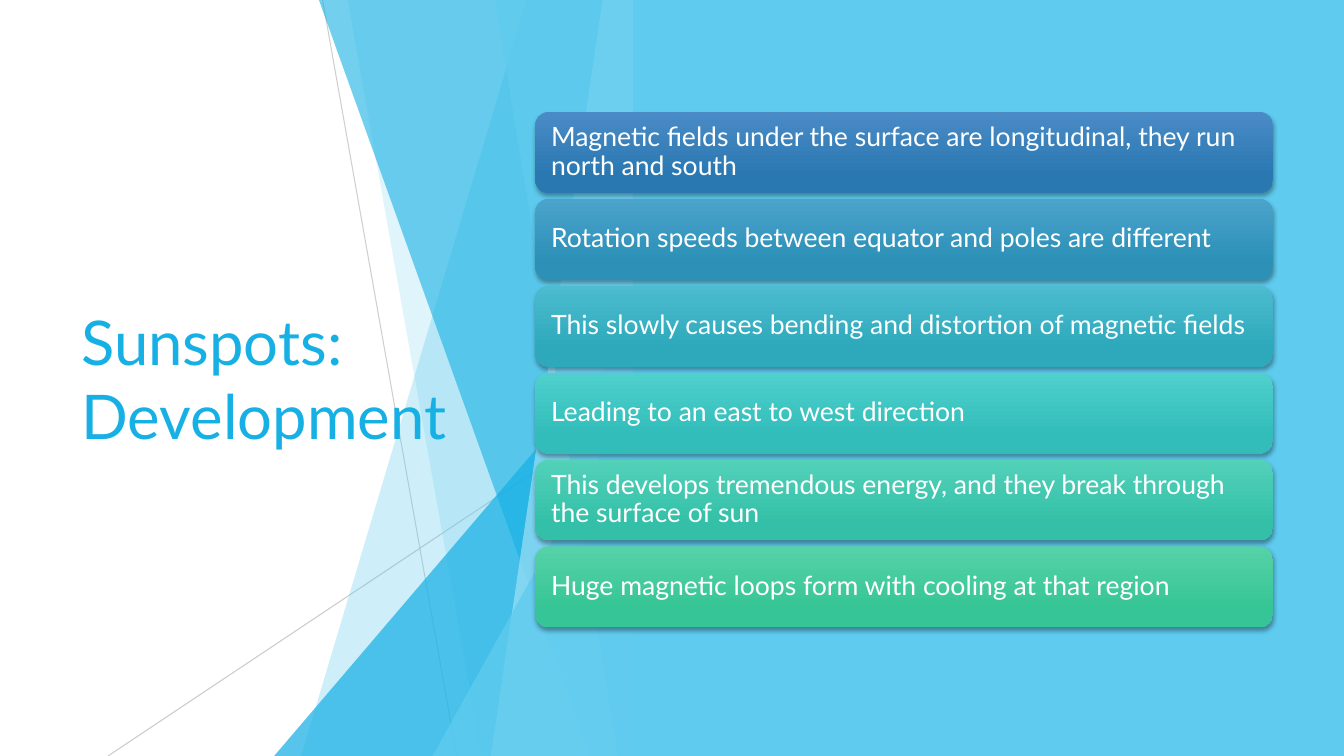
from lxml import etree
from pptx import Presentation
from pptx import util as u
from pptx.dml.color import RGBColor
from pptx.enum import shapes, text
from pptx.oxml import ns

WHITE = RGBColor(0xFF, 0xFF, 0xFF)
BLACK = RGBColor(0x00, 0x00, 0x00)
GREY = RGBColor(0xBF, 0xBF, 0xBF)
SKY = RGBColor(0x5F, 0xCB, 0xEF)
PALE = RGBColor(0x9F, 0xE0, 0xF5)
BLUE = RGBColor(0x17, 0xB0, 0xE4)

TITLE = "Sunspots: Development"
CARDS = [
    ("Magnetic fields under the surface are longitudinal, they run north and south", "4A8BC6", "2A78B2"),
    ("Rotation speeds between equator and poles are different", "4BA3CB", "2C90B7"),
    ("This slowly causes bending and distortion of magnetic fields", "4CBCCF", "2DA9BB"),
    ("Leading to an east to west direction", "4FD0CD", "32BDBA"),
    ("This develops tremendous energy, and they break through the surface of sun", "53D1B9", "34C0A8"),
    ("Huge magnetic loops form with cooling at that region", "56D2A7", "36C596"),
]

WIDTH, HEIGHT = 33.87, 19.05
PANEL_LEFT = 15.95
BAND_TOP = -0.02
RAYS = [((8.13, 0), (11.51, HEIGHT), 75), ((PANEL_LEFT, 10.24), (2.72, HEIGHT), 80)]
FACETS = [
    ("band", 13.28, 7.59, SKY, 30),
    ("band", 8.76, 12.14, SKY, 20),
    ("triangle", 6.91, 8.46, BLUE, 72),
    ("band", 8.03, 14.88, BLUE, 60),
    ("band", 15.19, 12.37, PALE, 70),
    ("band", 12.47, 15.57, SKY, 65),
    ("triangle", 10.9, 9.98, SKY, 80),
]
CARD_LEFT, CARD_TOP, CARD_WIDTH, CARD_HEIGHT, CARD_PITCH = 13.49, 2.82, 18.59, 2.04, 2.19

FRAME = {"word_wrap": True, "vertical_anchor": text.MSO_ANCHOR.MIDDLE}
CARD_INSETS = {"margin_left": u.Cm(0.3), "margin_right": u.Cm(0.3),
               "margin_top": u.Cm(0.3), "margin_bottom": u.Cm(0.3)}
TITLE_FONT = {"name": "Lato", "size": u.Pt(44)}
CARD_FONT = {"name": "Lato", "size": u.Pt(19)}
SHADOW = {"blurRad": u.Pt(3), "dist": u.Pt(2), "dir": 90 * 60000, "algn": "ctr", "rotWithShape": 0}


def apply_format(target, values):
    for name, value in values.items():
        setattr(target, name, value)


def add_element(parent, tag, **attributes):
    values = {name: str(value) for name, value in attributes.items()}
    return etree.SubElement(parent, ns.qn(tag), values)


def set_opacity(element, percent):
    color = next(element.iter(ns.qn("a:srgbClr")))
    add_element(color, "a:alpha", val=percent * 1000)


def paint(shape, color, opacity=100):
    shape.shadow.inherit = False
    shape.fill.solid()
    shape.fill.fore_color.rgb = color
    shape.line.fill.background()
    if opacity < 100:
        set_opacity(shape._element.spPr, opacity)


def write(shape, content, font, color, frame):
    apply_format(shape.text_frame, frame)
    paragraph = shape.text_frame.paragraphs[0]
    paragraph.text = content
    paragraph.alignment = text.PP_ALIGN.LEFT
    apply_format(paragraph.font, font)
    paragraph.font.color.rgb = color
    return paragraph


def add_preset(slide, kind, *box):
    return slide.shapes.add_shape(kind, *map(u.Cm, box))


def add_ray(slide, start, end, opacity):
    ray = slide.shapes.add_connector(shapes.MSO_CONNECTOR.STRAIGHT, *map(u.Cm, start + end))
    ray.line.color.rgb = GREY
    ray.line.width = u.Pt(0.75)
    set_opacity(ray._element.spPr, opacity)
    add_element(ray._element.spPr, "a:effectLst")


def add_band(slide, top_left, bottom_left):
    builder = slide.shapes.build_freeform(u.Cm(top_left), u.Cm(BAND_TOP))
    corners = [(PANEL_LEFT, BAND_TOP), (PANEL_LEFT, HEIGHT), (bottom_left, HEIGHT)]
    builder.add_line_segments([(u.Cm(x), u.Cm(y)) for x, y in corners], close=True)
    return builder.convert_to_shape()


def add_triangle(slide, left, top):
    triangle = add_preset(slide, shapes.MSO_SHAPE.ISOSCELES_TRIANGLE,
                          left, top, PANEL_LEFT - left, HEIGHT - top)
    triangle.adjustments[0] = 1
    return triangle


def add_card(slide, index, content, top_color, bottom_color):
    card = add_preset(slide, shapes.MSO_SHAPE.ROUNDED_RECTANGLE, CARD_LEFT,
                      CARD_TOP + index * CARD_PITCH, CARD_WIDTH, CARD_HEIGHT)
    card.line.fill.background()
    card.fill.gradient()
    card.fill.gradient_angle = 270
    stops = [(0, top_color), (0.78, bottom_color)]
    for stop, (position, color) in zip(card.fill.gradient_stops, stops):
        stop.position = position
        stop.color.rgb = RGBColor.from_string(color)
    card.shadow.inherit = False
    effects = card._element.spPr.find(ns.qn("a:effectLst"))
    shadow = add_element(effects, "a:outerShdw", **SHADOW)
    add_element(shadow, "a:srgbClr", val=BLACK)
    set_opacity(shadow, 35)
    paragraph = write(card, content, CARD_FONT, WHITE, FRAME | CARD_INSETS)
    paragraph.line_spacing = 0.9


def main():
    presentation = Presentation()
    presentation.slide_width, presentation.slide_height = u.Cm(WIDTH), u.Cm(HEIGHT)
    slide = presentation.slides.add_slide(presentation.slide_layouts[6])

    for ray in RAYS:
        add_ray(slide, *ray)
    makers = {"band": add_band, "triangle": add_triangle}
    for kind, first, second, color, opacity in FACETS:
        paint(makers[kind](slide, first, second), color, opacity)

    title = slide.shapes.add_textbox(*map(u.Cm, (1.8, 3.84, 9.86, 11.38)))
    write(title, TITLE, TITLE_FONT, BLUE, FRAME)

    panel = add_preset(slide, shapes.MSO_SHAPE.RECTANGLE, PANEL_LEFT, 0, WIDTH - PANEL_LEFT, HEIGHT)
    paint(panel, SKY)
    for index, card in enumerate(CARDS):
        add_card(slide, index, *card)

    presentation.save("out.pptx")


if __name__ == "__main__":
    main()
